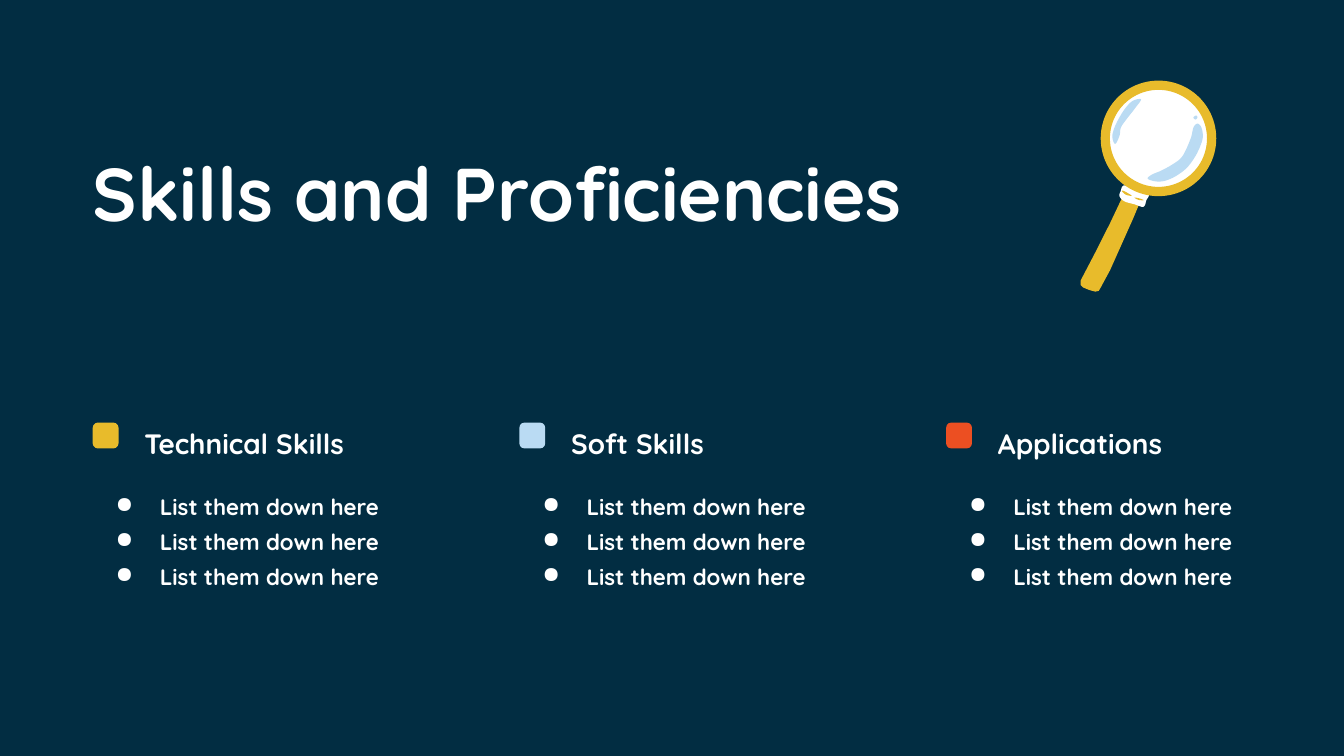
"""Build the skills and proficiencies slide."""
import dataclasses
import typing

import lxml.etree
import pptx
import pptx.dml.color
import pptx.enum.shapes
import pptx.oxml.ns
import pptx.slide
import pptx.text.text
import pptx.util

COLUMNS, ROWS = 100, 56.25
CELL = pptx.util.Inches(0.1)
FONT = "Quicksand"
NAVY, WHITE, YELLOW, BLUE, RED = "022D42", "FFFFFF", "E8BB2B", "BADBF3", "EC4F22"
MARGIN, COLUMN_PITCH, COLUMN_WIDTH = 6.9, 31.75, 22.7
SWATCH, HEADING_INDENT = 1.92, 3.85
LENS_X, LENS_Y = 86.2, 10.3
Point = tuple[float, float]


@dataclasses.dataclass(frozen=True)
class SkillGroup:
    """A heading, its swatch colour and its list."""

    heading: str
    colour: str
    skills: tuple[str, ...] = ("List them down here",) * 3


@dataclasses.dataclass(frozen=True)
class Outline:
    """A closed outline in grid cells, rounded when curved."""

    colour: str
    points: tuple[Point, ...]
    curved: bool = True


SKILL_GROUPS = (
    SkillGroup("Technical Skills", YELLOW),
    SkillGroup("Soft Skills", BLUE),
    SkillGroup("Applications", RED),
)
HANDLE = Outline(YELLOW, (
    (83.5, 14.7), (84.8, 15.1), (84.3, 16.3), (82.6, 20.1), (81.9, 21.4),
    (81.75, 21.65), (81.5, 21.7), (81.1, 21.6), (80.6, 21.4), (80.4, 21.2),
    (80.4, 20.9), (80.5, 20.7), (81.6, 18.6), (82.6, 16.6)), False)
COLLAR = Outline(WHITE, (
    (83.4, 14.2), (83.5, 13.9), (83.75, 13.8), (84.6, 14.05), (85.4, 14.35),
    (85.5, 14.55), (85.3, 14.9), (85.2, 15.25), (85, 15.4), (84.4, 15.2),
    (83.7, 15), (83.35, 14.7), (83.3, 14.45)))
COLLAR_CREASES = (
    Outline(YELLOW, ((83.5, 14.25), (83.6, 14.2), (84.2, 14.55), (83.8, 14.5))),
    Outline(YELLOW, ((84.4, 14.7), (84.8, 14.77), (85.1, 14.9), (84.7, 14.87))),
)
GLINTS = (
    Outline(BLUE, (
        (89.5, 10.2), (89.3, 10.9), (88.9, 11.7), (88.3, 12.5), (87.5, 13.1),
        (86.7, 13.45), (86, 13.5), (85.4, 13.3), (85.7, 13), (86.4, 12.7),
        (87.3, 12.2), (88, 11.6), (88.6, 10.3), (88.8, 9.5), (89.1, 9.2),
        (89.4, 9.5))),
    Outline(BLUE, (
        (84.3, 7.5), (84.9, 7.4), (84.5, 8), (83.8, 8.9), (83.4, 9.5),
        (83.3, 10.1), (83, 10.7), (82.8, 10.4), (82.8, 9.9), (83.1, 9.1),
        (83.7, 8.1))),
    Outline(BLUE, ((88.8, 8.75), (89, 8.6), (89.1, 8.75), (88.95, 8.9))),
)


def cells(count: float) -> pptx.util.Emu:
    """Turn grid cells into a length."""
    return pptx.util.Emu(round(count * CELL))


def paint(fill: typing.Any, colour: str) -> None:
    """Make a fill solid in a hex colour."""
    fill.solid()
    fill.fore_color.rgb = pptx.dml.color.RGBColor.from_string(colour)


def finish(shape: typing.Any, colour: str) -> None:
    """Give a shape a flat fill with no line or shadow."""
    shape.shadow.inherit = False
    paint(shape.fill, colour)
    shape.line.fill.background()


def add_preset(slide: pptx.slide.Slide, kind: pptx.enum.shapes.MSO_SHAPE,
               left: float, top: float, size: float, colour: str,
               adjustment: float | None = None) -> None:
    """Draw a square-framed preset shape."""
    shape = slide.shapes.add_shape(
        kind, cells(left), cells(top), cells(size), cells(size))
    if adjustment is not None:
        shape.adjustments[0] = adjustment
    finish(shape, colour)


def rounded(points: tuple[Point, ...], steps: int = 6) -> list[Point]:
    """Run a closed Catmull-Rom curve through the points."""
    curve = []
    for index, start in enumerate(points):
        before = points[index - 1]
        end, after = (points[(index + k) % len(points)] for k in (1, 2))
        for step in range(steps):
            t = step / steps
            x, y = (
                b + 0.5 * t * (c - a + t * (2 * a - 5 * b + 4 * c - d
                                            + t * (3 * (b - c) + d - a)))
                for a, b, c, d in zip(before, start, end, after))
            curve.append((x, y))
    return curve


def add_outline(slide: pptx.slide.Slide, outline: Outline) -> None:
    """Draw a closed outline."""
    points = rounded(outline.points) if outline.curved else outline.points
    first, *rest = [(cells(x), cells(y)) for x, y in points]
    builder = slide.shapes.build_freeform(*first)
    builder.add_line_segments(rest, close=True)
    finish(builder.convert_to_shape(), outline.colour)


def add_bullet(paragraph: typing.Any) -> None:
    """Give a paragraph a white round bullet and a hanging indent."""
    properties = paragraph._p.get_or_add_pPr()
    properties.set("marL", str(pptx.util.Inches(0.5)))
    properties.set("indent", str(-pptx.util.Inches(0.33)))
    qualify = pptx.oxml.ns.qn
    bullet_colour = lxml.etree.SubElement(properties, qualify("a:buClr"))
    lxml.etree.SubElement(bullet_colour, qualify("a:srgbClr"), val=WHITE)
    lxml.etree.SubElement(properties, qualify("a:buChar"), char="●")


def add_text(slide: pptx.slide.Slide, lines: tuple[str, ...], left: float,
             top: float, width: float, height: float, size: float,
             spacing: float = 1.0, bulleted: bool = False) -> None:
    """Write bold white lines in a box without insets."""
    box = slide.shapes.add_textbox(
        cells(left), cells(top), cells(width), cells(height))
    frame = box.text_frame
    frame.word_wrap = True
    frame.margin_left = frame.margin_right = 0
    frame.margin_top = frame.margin_bottom = 0
    for index, line in enumerate(lines):
        paragraph = frame.add_paragraph() if index else frame.paragraphs[0]
        if bulleted:
            add_bullet(paragraph)
        paragraph.line_spacing = spacing
        run = paragraph.add_run()
        run.text = line
        run.font.name = FONT
        run.font.size = pptx.util.Pt(size)
        run.font.bold = True
        paint(run.font.fill, WHITE)


def add_skill_group(slide: pptx.slide.Slide, group: SkillGroup, left: float) -> None:
    """Draw one column of skills."""
    add_text(slide, group.skills, left, 36.1, COLUMN_WIDTH, 7.3, 12, 1.3, True)
    add_preset(slide, pptx.enum.shapes.MSO_SHAPE.ROUNDED_RECTANGLE,
               left, 31.45, SWATCH, group.colour, 0.2)
    add_text(slide, (group.heading,), left + HEADING_INDENT, 31.2,
             COLUMN_WIDTH - HEADING_INDENT, 2.5, 15, 1.2)


def add_magnifier(slide: pptx.slide.Slide) -> None:
    """Draw the magnifying glass from handle to rim."""
    add_outline(slide, HANDLE)
    presets = pptx.enum.shapes.MSO_SHAPE
    add_preset(slide, presets.OVAL, LENS_X - 4, LENS_Y - 4, 8, WHITE)
    for glint in GLINTS:
        add_outline(slide, glint)
    add_outline(slide, COLLAR)
    add_preset(slide, presets.DONUT, LENS_X - 4.3, LENS_Y - 4.3, 8.6, YELLOW, 0.08)
    for crease in COLLAR_CREASES:
        add_outline(slide, crease)


def main() -> None:
    """Compose and save the slide."""
    presentation = pptx.Presentation()
    presentation.slide_width = cells(COLUMNS)
    presentation.slide_height = cells(ROWS)
    slide = presentation.slides.add_slide(presentation.slide_layouts[6])
    paint(slide.background.fill, NAVY)
    add_text(slide, ("Skills and Proficiencies",), MARGIN, 10.9, 69.4, 6.7, 40)
    for column, group in enumerate(SKILL_GROUPS):
        add_skill_group(slide, group, MARGIN + column * COLUMN_PITCH)
    add_magnifier(slide)
    presentation.save("out.pptx")


if __name__ == "__main__":
    main()
